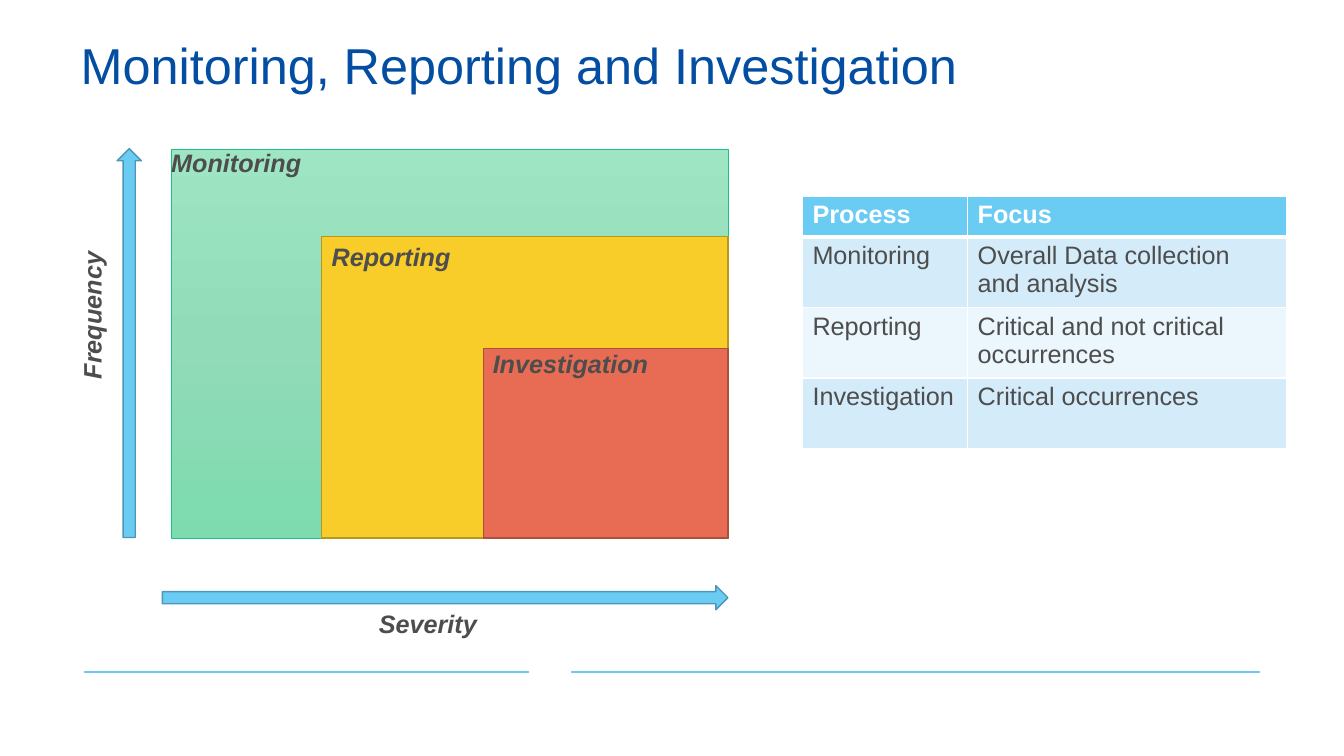
import copy

import pptx
import pptx.dml.color
import pptx.enum.shapes
import pptx.enum.text
import pptx.oxml.ns
import pptx.util
from lxml import etree

Pt = pptx.util.Pt
qn = pptx.oxml.ns.qn
SHAPE = pptx.enum.shapes.MSO_SHAPE
ANCHOR = pptx.enum.text.MSO_ANCHOR
SKY, GREY, WHITE = "6ACBF3", "4D4D4D", "FFFFFF"


def rgb(value):
    return pptx.dml.color.RGBColor.from_string(value)


class SlideBuilder:
    font = "Arial"

    def __init__(self, prs):
        self.s = prs.slides.add_slide(prs.slide_layouts[5])

    def add_run(self, p, text, size, color, bold=False, italic=False):
        r = p.add_run()
        r.text = text
        f = r.font
        f.name, f.size, f.bold, f.italic = self.font, Pt(size), bold, italic
        f.color.rgb = rgb(color)

    def title(self, text, x, y, w, h):
        sp = self.s.shapes.title
        sp.left, sp.top, sp.width, sp.height = Pt(x), Pt(y), Pt(w), Pt(h)
        tf = sp.text_frame
        tf.word_wrap = True
        tf.auto_size = pptx.enum.text.MSO_AUTO_SIZE.NONE
        tf.vertical_anchor = ANCHOR.TOP
        p = tf.paragraphs[0]
        p.alignment = pptx.enum.text.PP_ALIGN.LEFT
        p.line_spacing = 0.9
        self.add_run(p, text, 36, "034EA2")

    def line(self, x1, x2, y):
        c = self.s.shapes.add_connector(
            pptx.enum.shapes.MSO_CONNECTOR.STRAIGHT, Pt(x1), Pt(y), Pt(x2), Pt(y))
        c.line.color.rgb = rgb(SKY)
        c.line.width = Pt(0.75)
        etree.SubElement(c._element.spPr, qn("a:effectLst"))

    def shape(self, kind, x, y, w, h, fill, line, weight=1, rotation=0):
        sp = self.s.shapes.add_shape(kind, Pt(x), Pt(y), Pt(w), Pt(h))
        sp.shadow.inherit = False
        sp.rotation = rotation
        if isinstance(fill, str):
            sp.fill.solid()
            sp.fill.fore_color.rgb = rgb(fill)
        else:
            self.gradient(sp, fill)
        sp.line.color.rgb = rgb(line)
        sp.line.width = Pt(weight)

    def gradient(self, sp, colors):
        """Spread three colours evenly from top to bottom."""
        sp.fill.gradient()
        sp.fill.gradient_angle = 270
        stops = sp._element.spPr.find(".//" + qn("a:gsLst"))
        stops.append(copy.deepcopy(stops[0]))
        for i, (stop, color) in enumerate(zip(sp.fill.gradient_stops, colors)):
            stop.position = i / 2
            stop.color.rgb = rgb(color)

    def label(self, text, x, y, w=169.2, rotation=0):
        sp = self.s.shapes.add_textbox(Pt(x), Pt(y), Pt(w), Pt(29))
        sp.rotation = rotation
        sp.text_frame.word_wrap = True
        self.add_run(sp.text_frame.paragraphs[0], text, 18, GREY, True, True)

    def border(self, cell, side, weight):
        ln = etree.SubElement(cell._tc.get_or_add_tcPr(), qn("a:ln" + side),
                              w=str(Pt(weight)))
        fill = etree.SubElement(ln, qn("a:solidFill"))
        etree.SubElement(fill, qn("a:srgbClr"), val=WHITE)

    def table(self, rows, x, y, widths, heights, fills):
        table = self.s.shapes.add_table(
            len(rows), len(widths), Pt(x), Pt(y),
            Pt(sum(widths)), Pt(sum(heights))).table
        for column, width in zip(table.columns, widths):
            column.width = Pt(width)
        for i, row in enumerate(rows):
            table.rows[i].height = Pt(heights[i])
            for j, text in enumerate(row):
                cell = table.cell(i, j)
                for side in "LRTB":
                    thick = (i, side) in ((0, "B"), (1, "T"))
                    self.border(cell, side, 3 if thick else 1)
                cell.fill.solid()
                cell.fill.fore_color.rgb = rgb(fills[i])
                self.add_run(cell.text_frame.paragraphs[0], text, 18,
                             WHITE if i == 0 else GREY, bold=i == 0)


def main():
    prs = pptx.Presentation()
    prs.slide_width, prs.slide_height = Pt(960), Pt(540)
    b = SlideBuilder(prs)

    # Footer rules and title
    b.line(60, 378, 480)
    b.line(408, 900, 480)
    b.title("Monitoring, Reporting and Investigation", 50.4, 26, 820.8, 98.5)

    # Nested areas sharing the bottom right corner
    right, bottom = 520, 384.3
    areas = [
        (122.5, 106.5, ("9EE6C3", "91DBB8", "7DDBAF"), "1EC08A", 0.5),
        (229.8, 168.8, "F8CC29", "B7971E", 1),
        (345.6, 249, "E76C53", "AB503D", 1),
    ]
    for x, y, fill, line, weight in areas:
        b.shape(SHAPE.RECTANGLE, x, y, right - x, bottom - y, fill, line, weight)
    b.label("Monitoring", 115.2, 101.5)
    b.label("Reporting", 229.8, 168.8)
    b.label("Investigation", 344.9, 245)

    # Axes
    arrow = SHAPE.RIGHT_ARROW
    b.shape(arrow, 116, 418.3, 404, 17.3, SKY, "4E96B4")
    b.label("Severity", 263.5, 431.3)
    b.shape(arrow, -46.6, 236.4, 277.8, 17.3, SKY, "4E96B4", rotation=270)
    b.label("Frequency", 7.2, 205.2, 116.6, rotation=270)

    # Process table
    rows = [
        ("Process", "Focus"),
        ("Monitoring", "Overall Data collection and analysis"),
        ("Reporting", "Critical and not critical occurrences"),
        ("Investigation", "Critical occurrences"),
    ]
    b.table(rows, 573.2, 140, (118, 228.2), (29.2, 50.4, 50.4, 50.4),
            (SKY, "D4ECFA", "EBF6FD", "D4ECFA"))

    prs.save("out.pptx")


if __name__ == "__main__":
    main()
